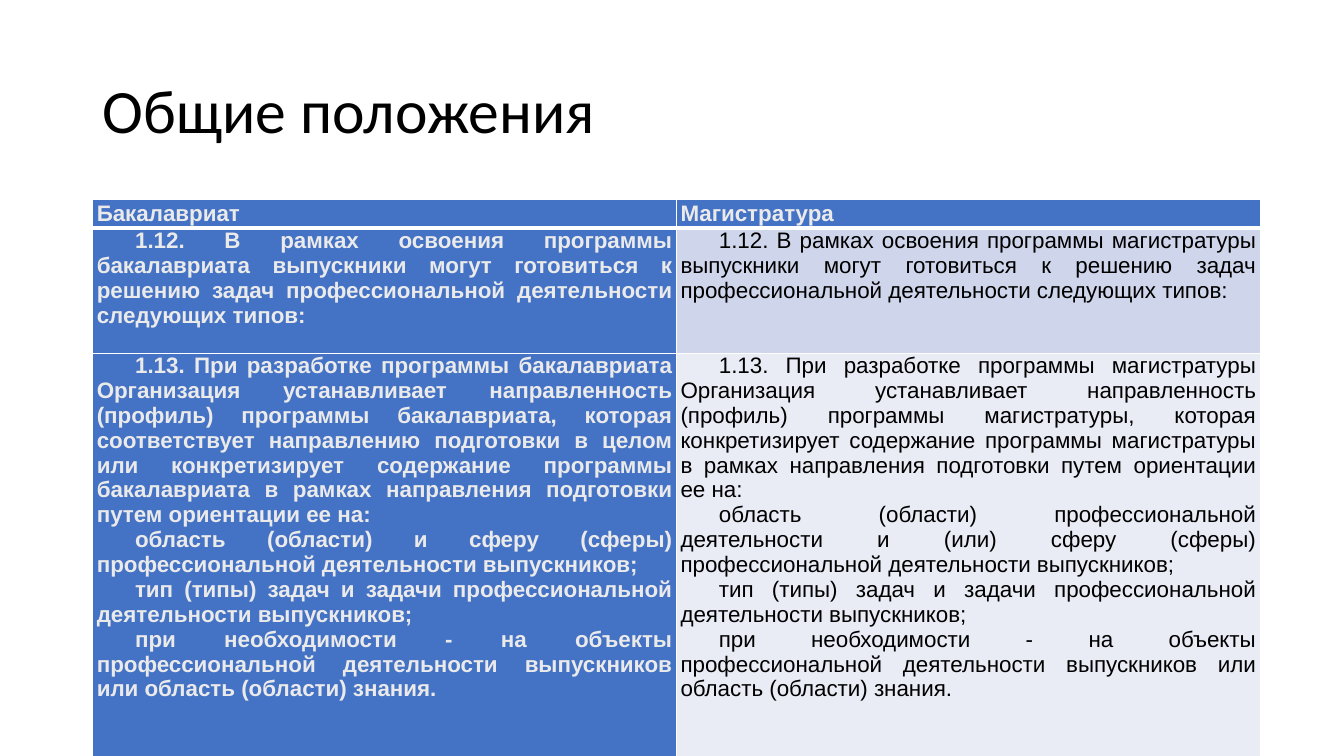
from lxml.etree import SubElement
from pptx import Presentation
from pptx.dml.color import RGBColor
from pptx.enum.text import MSO_ANCHOR, PP_ALIGN
from pptx.oxml.ns import qn
from pptx.util import Inches, Pt

BLACK = RGBColor(0x00, 0x00, 0x00)
WHITE = RGBColor(0xFF, 0xFF, 0xFF)
LIGHT_GREY = RGBColor(0xEA, 0xEA, 0xEA)
BLUE = RGBColor(0x44, 0x72, 0xC4)
PALE_BLUE = RGBColor(0xCF, 0xD5, 0xEA)
PALEST_BLUE = RGBColor(0xE9, 0xEB, 0xF5)

ROW_HEIGHTS = (0.27, 1.24, 4)
COLUMN_WIDTH = 5.79
RIGHT_FILLS = (BLUE, PALE_BLUE, PALEST_BLUE)

TASK_TYPES = "тип (типы) задач и задачи профессиональной деятельности выпускников;"
OBJECTS = ("при необходимости - на объекты профессиональной деятельности "
           "выпускников или область (области) знания.")
ROWS = (
    (["Бакалавриат"], ["Магистратура"]),
    (
        ["1.12. В рамках освоения программы бакалавриата выпускники могут готовиться "
         "к решению задач профессиональной деятельности следующих типов:"],
        ["1.12. В рамках освоения программы магистратуры выпускники могут готовиться "
         "к решению задач профессиональной деятельности следующих типов:"],
    ),
    (
        ["1.13. При разработке программы бакалавриата Организация устанавливает "
         "направленность (профиль) программы бакалавриата, которая соответствует "
         "направлению подготовки в целом или конкретизирует содержание программы "
         "бакалавриата в рамках направления подготовки путем ориентации ее на:",
         "область (области) и сферу (сферы) профессиональной деятельности выпускников;",
         TASK_TYPES, OBJECTS],
        ["1.13. При разработке программы магистратуры Организация устанавливает "
         "направленность (профиль) программы магистратуры, которая конкретизирует "
         "содержание программы магистратуры в рамках направления подготовки путем "
         "ориентации ее на:",
         "область (области) профессиональной деятельности и (или) сферу (сферы) "
         "профессиональной деятельности выпускников;",
         TASK_TYPES, OBJECTS],
    ),
)


def set_font(paragraph, name, size, color, bold=False):
    font = paragraph.font
    font.name = name
    font.size = Pt(size)
    font.bold = bold
    font.color.rgb = color


def add_title(slide, text):
    box = slide.shapes.add_textbox(Inches(0.92), Inches(0.4), Inches(11.5), Inches(1.45))
    frame = box.text_frame
    frame.word_wrap = True
    frame.vertical_anchor = MSO_ANCHOR.MIDDLE
    paragraph = frame.paragraphs[0]
    paragraph.text = text
    paragraph.line_spacing = 0.9
    set_font(paragraph, "Calibri", 44, BLACK)


def set_borders(cell, widths):
    """Draw white borders; widths are points for left, right, top, bottom."""
    properties = cell._tc.get_or_add_tcPr()
    for index, (side, width) in enumerate(zip("LRTB", widths)):
        line = properties.makeelement(qn(f"a:ln{side}"), {"w": str(Pt(width))})
        fill = SubElement(line, qn("a:solidFill"))
        SubElement(fill, qn("a:srgbClr"), val=str(WHITE))
        properties.insert(index, line)


def fill_cell(cell, texts, fill, is_header, is_highlighted):
    cell.margin_left = cell.margin_right = Inches(0.04)
    cell.margin_top = cell.margin_bottom = 0
    cell.fill.solid()
    cell.fill.fore_color.rgb = fill
    frame = cell.text_frame
    frame.text = "\n".join(texts)
    for paragraph in frame.paragraphs:
        set_font(paragraph, "Arial", 16,
                 LIGHT_GREY if is_highlighted else BLACK, is_highlighted)
        if is_header:
            paragraph.line_spacing = 1.07
        else:
            paragraph.alignment = PP_ALIGN.JUSTIFY
            paragraph._p.get_or_add_pPr().set("indent", str(Inches(0.38)))


def add_comparison_table(slide):
    table = slide.shapes.add_table(
        len(ROWS), 2, Inches(0.92), Inches(1.98),
        Inches(2 * COLUMN_WIDTH), Inches(sum(ROW_HEIGHTS))).table
    table.first_col = True
    table.horz_banding = True
    for column in table.columns:
        column.width = Inches(COLUMN_WIDTH)
    for row, height in enumerate(ROW_HEIGHTS):
        table.rows[row].height = Inches(height)
        for column, texts in enumerate(ROWS[row]):
            cell = table.cell(row, column)
            is_header = row == 0
            fill = RIGHT_FILLS[row] if column else BLUE
            fill_cell(cell, texts, fill, is_header, is_header or column == 0)
            set_borders(cell, (1, 1, 3 if row == 1 else 1, 3 if is_header else 1))


def main():
    presentation = Presentation()
    presentation.slide_width = Inches(13.33)
    presentation.slide_height = Inches(7.5)
    slide = presentation.slides.add_slide(presentation.slide_layouts[6])
    slide.background.fill.solid()
    slide.background.fill.fore_color.rgb = WHITE
    add_title(slide, "Общие положения")
    add_comparison_table(slide)
    presentation.save("out.pptx")


if __name__ == "__main__":
    main()
